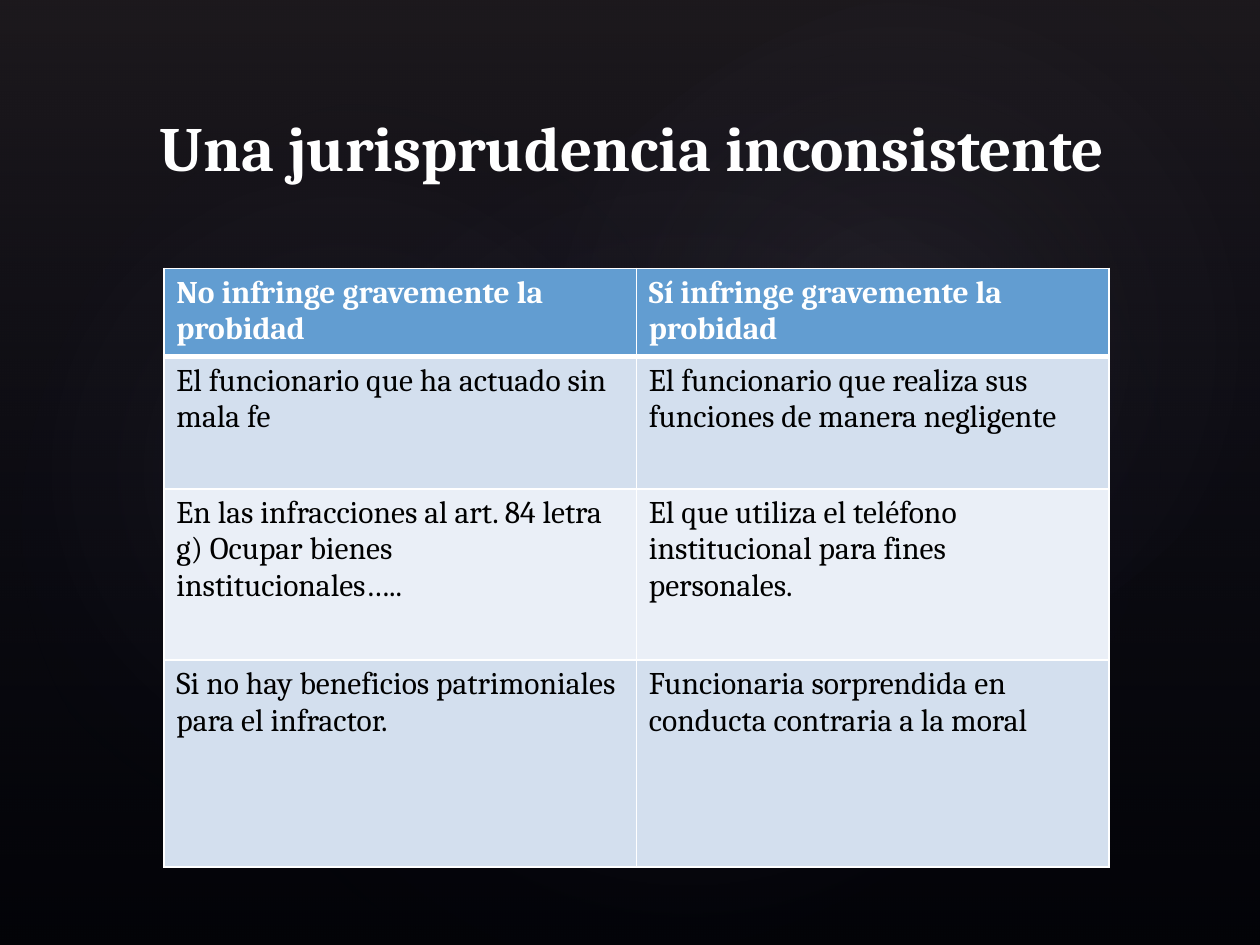
from pptx import Presentation
from pptx.dml.color import RGBColor
from pptx.enum.shapes import MSO_SHAPE
from pptx.enum.text import MSO_ANCHOR, PP_ALIGN
from pptx.oxml import parse_xml
from pptx.oxml.ns import nsdecls
from pptx.util import Inches, Pt

RECT, OVAL = MSO_SHAPE.RECTANGLE, MSO_SHAPE.OVAL
MIDDLE, CENTER = MSO_ANCHOR.MIDDLE, PP_ALIGN.CENTER
FONT = "Cambria"
WHITE, BLACK = "FFFFFF", "000000"
HEAD, BANDS = "629DD1", ("D3DFEE", "EAEFF7")

TITLE = "Una jurisprudencia inconsistente"
ROWS = [
    ("No infringe gravemente la probidad",
     "Sí infringe gravemente la probidad"),
    ("El funcionario que ha actuado sin mala fe",
     "El funcionario que realiza sus funciones de manera negligente"),
    ("En las infracciones al art. 84 letra g) Ocupar bienes institucionales…..",
     "El que utiliza el teléfono institucional para fines personales."),
    ("Si no hay beneficios patrimoniales para el infractor.",
     "Funcionaria sorprendida en conducta contraria a la moral"),
]
HEIGHTS = [0.7, 1.05, 1.36, 1.64]
COL = 3.75

LINEAR = '<a:lin ang="5400000" scaled="0"/>'
RADIAL = ('<a:path path="circle"><a:fillToRect l="50000" t="50000" '
          'r="50000" b="50000"/></a:path>')
# preset, box, rotation, stops (position, colour, opacity), direction
GLOWS = [(RECT, (0, 0, 10, 7.5), 0,
          [(0, "504652", 36), (100, "242852", 10)], LINEAR)]
GLOWS += [(OVAL, box, turn, [(0, "C4BCC6", alpha), (58, "242852", 0)], RADIAL)
          for box, turn, alpha in [((1.5, 1.14, 7.92, 6.24), 328.7, 7),
                                   ((-0.3, 1.28, 6.06, 4.9), 294.3, 8),
                                   ((3.58, 0.13, 7.09, 5.2), 328.7, 8)]]


def rgb(code):
    return RGBColor.from_string(code)


def paint(fill, code):
    fill.solid()
    fill.fore_color.rgb = rgb(code)


def write(frame, text, size, code, bold):
    run = frame.paragraphs[0].add_run()
    run.text = text
    font = run.font
    font.name, font.size, font.bold = FONT, Pt(size), bold
    font.color.rgb = rgb(code)


def add_glow(slide, order, kind, box, turn, stops, way):
    """Add a see-through gradient shape behind the slide's content."""
    shape = slide.shapes.add_shape(kind, *map(Inches, box))
    shape.rotation = turn
    shape.shadow.inherit = False
    shape.line.fill.background()
    shape.fill.background()
    marks = "".join(
        f'<a:gs pos="{pos * 1000}"><a:srgbClr val="{code}">'
        f'<a:alpha val="{alpha * 1000}"/></a:srgbClr></a:gs>'
        for pos, code, alpha in stops)
    grad = parse_xml(f'<a:gradFill {nsdecls("a")} rotWithShape="1">'
                     f'<a:gsLst>{marks}</a:gsLst>{way}</a:gradFill>')
    props = shape.element.spPr
    props.replace(props.find("{*}noFill"), grad)
    slide.shapes.element.insert(2 + order, shape.element)


def set_edges(cell, **widths):
    """Give a cell white borders; edges must come before the fill."""
    props = cell._tc.get_or_add_tcPr()
    for side, width in widths.items():
        props.append(parse_xml(
            f'<a:ln{side} {nsdecls("a")} w="{Pt(width)}"><a:solidFill>'
            f'<a:srgbClr val="{WHITE}"/></a:solidFill></a:ln{side}>'))


def add_grid(slide):
    grid = slide.shapes.add_table(
        len(ROWS), 2, Inches(1.3), Inches(2.13),
        Inches(2 * COL), Inches(sum(HEIGHTS))).table
    for col in grid.columns:
        col.width = Inches(COL)
    for i, (texts, height) in enumerate(zip(ROWS, HEIGHTS)):
        grid.rows[i].height = Inches(height)
        top = i == 0
        for j, text in enumerate(texts):
            cell = grid.cell(i, j)
            set_edges(cell, L=1, R=1, T=3 if i == 1 else 1, B=3 if top else 1)
            paint(cell.fill, HEAD if top else BANDS[(i - 1) % 2])
            write(cell.text_frame, text, 18, WHITE if top else BLACK, top)


def main():
    deck = Presentation()
    deck.slide_width, deck.slide_height = Inches(10), Inches(7.5)
    slide = deck.slides.add_slide(deck.slide_layouts[5])
    paint(slide.background.fill, BLACK)
    for order, glow in enumerate(GLOWS):
        add_glow(slide, order, *glow)

    title = slide.shapes.title
    title.left, title.top = Inches(0.98), Inches(0.81)
    title.width, title.height = Inches(8.07), Inches(0.71)
    frame = title.text_frame
    frame.vertical_anchor = MIDDLE
    frame.paragraphs[0].alignment = CENTER
    write(frame, TITLE, 36, WHITE, True)

    add_grid(slide)
    deck.save("out.pptx")


if __name__ == "__main__":
    main()
